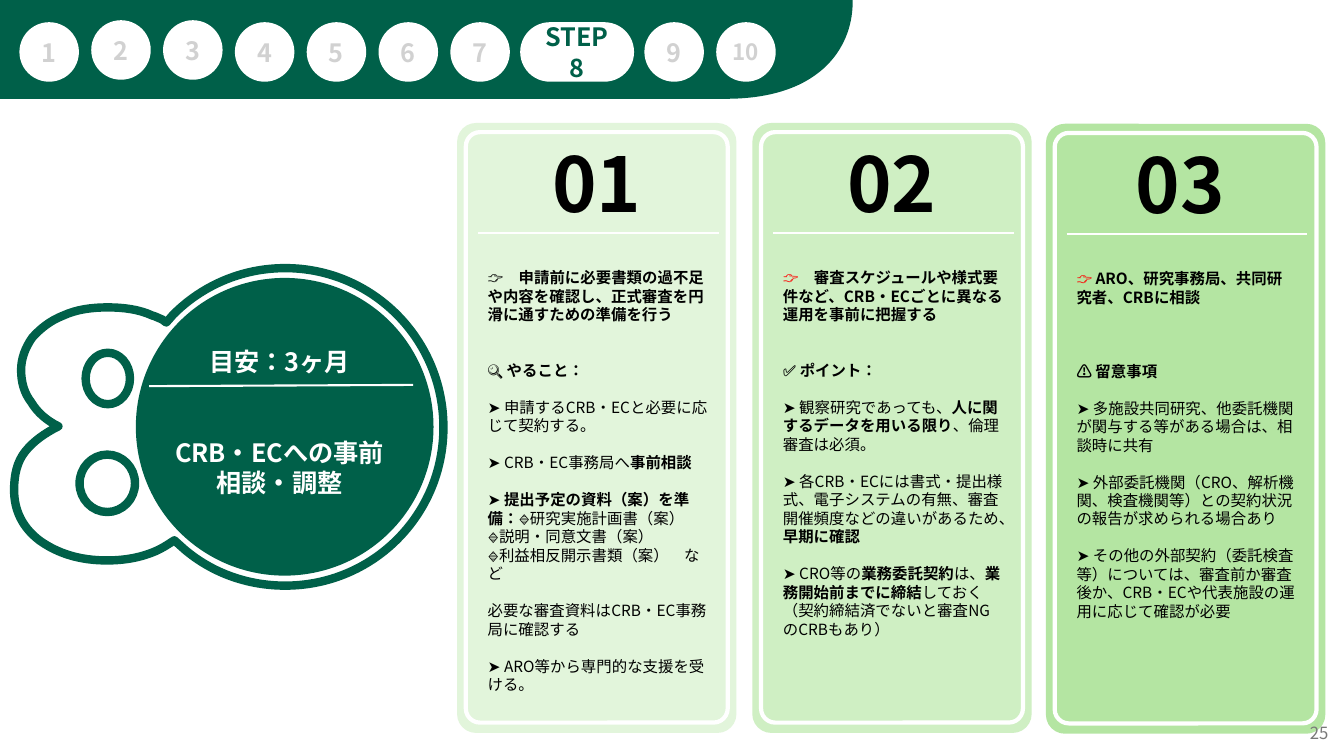
from lxml.etree import SubElement
from pptx import Presentation
from pptx.dml.color import RGBColor as RGB
from pptx.enum.lang import MSO_LANGUAGE_ID as Lang
from pptx.enum.shapes import MSO_CONNECTOR as Link, MSO_SHAPE as Kind
from pptx.enum.text import MSO_ANCHOR as Anchor, PP_ALIGN as Align
from pptx.oxml.ns import qn
from pptx.util import Cm, Pt

FONT = "Noto Sans CJK JP"
GREEN = RGB(0x00, 0x60, 0x49)
WHITE = RGB(0xFF, 0xFF, 0xFF)
BLACK = RGB(0x00, 0x00, 0x00)
RED = RGB(0xFF, 0x00, 0x00)
PALE = RGB(0xD1, 0xD1, 0xD1)
GREY = RGB(0x79, 0x79, 0x79)
MINT = RGB(0xE2, 0xF5, 0xDB)
LIME = RGB(0xCF, 0xEF, 0xC3)
LEAF = RGB(0xB4, 0xE5, 0xA2)

UNIT = Cm(0.0254)  # outlines are drawn on a grid of 1/100 inch
# Two numbers are a corner, six are a curve.
BAND = [(0, 0), (723, 0), (846, 0), (847, 43, 818, 97, 723, 98), (0, 98), (0, 0)]
EIGHT = [
    (283, 266), (370, 266, 440, 337, 440, 424), (440, 511, 370, 581, 283, 581),
    (245, 581, 210, 568, 183, 545), (173, 536), (167, 540, 161, 544, 154, 547),
    (140, 553, 124, 556, 106, 556), (79, 556, 57, 549, 39, 536),
    (22, 523, 14, 506, 14, 486), (14, 471, 17, 458, 25, 448),
    (33, 438, 44, 430, 58, 423), (46, 417, 37, 409, 31, 399),
    (24, 390, 21, 379, 21, 367), (21, 356, 25, 345, 32, 335),
    (40, 326, 50, 318, 63, 313), (76, 307, 91, 305, 107, 305),
    (123, 305, 138, 307, 151, 313), (155, 314, 158, 316, 161, 317),
    (165, 320), (172, 312), (200, 284, 239, 266, 283, 266),
]

# Each line is (blank lines before, text); ** switches bold on and off.
CARDS = [
    (11.52, 3.1, "01", MINT, 0, BLACK, "👉　",
     "申請前に必要書類の過不足や内容を確認し、正式審査を円滑に通すための準備を行う", [
         (2, "**🔍 やること："),
         (1, "➤ 申請するCRB・ECと必要に応じて契約する。"),
         (1, "➤ CRB・EC事務局へ**事前相談"),
         (1, "➤ **提出予定の資料（案）を準備：🔹**研究実施計画書（案）"),
         (0, "🔹説明・同意文書（案）"),
         (0, "🔹利益相反開示書類（案）　など"),
         (1, "必要な審査資料はCRB・EC事務局に確認する"),
         (1, "➤ ARO等から専門的な支援を受ける。")]),
    (18.96, 3.1, "02", LIME, 0, RED, "👉　",
     "審査スケジュールや様式要件など、CRB・ECごとに異なる運用を事前に把握する", [
         (2, "**✅ ポイント："),
         (1, "➤ 観察研究であっても、**人に関するデータを用いる限り**、倫理審査は必須。"),
         (1, "➤ 各CRB・ECには書式・提出様式、電子システムの有無、"
             "審査開催頻度などの違いがあるため、**早期に確認"),
         (1, "➤ CRO等の**業務委託契約**は、**業務開始前までに締結**しておく"
             "（契約締結済でないと審査NGのCRBもあり）")]),
    (26.36, 3.12, "03", LEAF, -0.13, RED, "👉 ",
     "ARO、研究事務局、共同研究者、CRBに相談", [
         (3, "**⚠️ 留意事項"),
         (1, "➤ 多施設共同研究、他委託機関が関与する等がある場合は、相談時に共有"),
         (1, "➤ 外部委託機関（CRO、解析機関、検査機関等）との契約状況の報告が"
             "求められる場合あり"),
         (1, "➤ その他の外部契約（委託検査等）については、審査前か審査後か、"
             "CRB・ECや代表施設の運用に応じて確認が必要")]),
]


def add_run(para, text, size, color, bold=True):
    run = para.add_run()
    run.text = text
    font = run.font
    font.name, font.size, font.bold = FONT, Pt(size), bold
    font.color.rgb = color
    font.language_id = Lang.JAPANESE
    SubElement(font._element, qn("a:ea"), typeface=FONT)


def set_para(para, size, align=Align.LEFT, gap=0):
    """Fix the line pitch and leave a gap of whole lines above."""
    pitch = size * 1.2
    para.line_spacing = Pt(pitch)
    para.space_before = Pt(gap * pitch)
    para.alignment = align


def put_line(frame, text, size, color, align=Align.CENTER, bold=True):
    para = frame.paragraphs[0]
    set_para(para, size, align)
    add_run(para, text, size, color, bold)


def paint(shape, fill, line=None, width=0):
    shape.shadow.inherit = False
    shape.fill.solid()
    shape.fill.fore_color.rgb = fill
    if line is None:
        shape.line.fill.background()
    else:
        shape.line.color.rgb = line
        shape.line.width = Pt(width)


def add_box(slide, x, y, w, h):
    frame = slide.shapes.add_textbox(Cm(x), Cm(y), Cm(w), Cm(h)).text_frame
    frame.word_wrap = True
    return frame


def add_form(slide, kind, x, y, w, h, fill, line=None, width=0, round_by=None):
    shape = slide.shapes.add_shape(kind, Cm(x), Cm(y), Cm(w), Cm(h))
    if round_by is not None:
        shape.adjustments[0] = round_by
    paint(shape, fill, line, width)
    shape.text_frame.vertical_anchor = Anchor.MIDDLE
    return shape.text_frame


def add_rule(slide, x1, y1, x2, y2):
    rule = slide.shapes.add_connector(Link.STRAIGHT, Cm(x1), Cm(y1), Cm(x2), Cm(y2))
    rule.line.color.rgb = WHITE
    rule.line.width = Pt(1.5)
    SubElement(rule.element.spPr, qn("a:effectLst"))


def ring(x, y, rx, ry):
    """Four curves that make an ellipse."""
    kx, ky = 0.55 * rx, 0.55 * ry
    l, r, t, b = x - rx, x + rx, y - ry, y + ry
    return [(x, t), (x - kx, t, l, y - ky, l, y), (l, y + ky, x - kx, b, x, b),
            (x + kx, b, r, y + ky, r, y), (r, y - ky, x + kx, t, x, t)]


def add_outline(slide, loops, fill, line=None, width=0):
    """Draw every node as straight lines, then merge threes into curves."""
    pen = None
    for loop in loops:
        x, y = (v * UNIT for v in loop[0])
        if pen is None:
            pen = slide.shapes.build_freeform(x, y)
        else:
            pen.move_to(x, y)
        dots = [(n[i] * UNIT, n[i + 1] * UNIT)
                for n in loop[1:] for i in range(0, len(n), 2)]
        pen.add_line_segments(dots, close=True)
    shape = pen.convert_to_shape()
    legs = iter(list(shape.element.iter(qn("a:lnTo"))))
    for node in (n for loop in loops for n in loop[1:]):
        leg = next(legs)
        if len(node) == 6:
            leg.tag = qn("a:cubicBezTo")
            for more in (next(legs), next(legs)):
                leg.append(more[0])
                more.getparent().remove(more)
    paint(shape, fill, line, width)


def add_badge(slide, title):
    holes = [ring(106.5, 479.5, 27.5, 28.5), ring(107, 375.5, 22, 25.5)]
    add_outline(slide, holes + [EIGHT], WHITE, GREEN, 6)
    add_form(slide, Kind.FLOWCHART_CONNECTOR, 3.53, 7.11, 7.29, 7.29, GREEN, GREEN, 6)
    put_line(add_box(slide, 4.11, 8.61, 5.87, 1.1), "目安：3ヶ月", 18, WHITE)
    add_rule(slide, 3.76, 9.73, 10.41, 9.7)
    title.left, title.top, title.width, title.height = Cm(4.11), Cm(10.88), Cm(5.87), Cm(1.9)
    frame = title.text_frame
    frame.word_wrap = True
    frame.vertical_anchor = Anchor.TOP
    put_line(frame, "CRB・ECへの事前相談・調整", 18, WHITE)
    title.element.getparent().append(title.element)  # in front of the circle


def add_card(slide, x, y, label, fill, nudge, tint, icon, lead, notes):
    add_form(slide, Kind.ROUNDED_RECTANGLE, x, y, 7.04, 15.37, fill, round_by=0.068)
    add_form(slide, Kind.ROUNDED_RECTANGLE, x + 0.22, y + 0.23, 6.6, 14.88,
             fill, WHITE, 3, round_by=0.054)
    put_line(add_box(slide, x + 1.72 + nudge, y + 0.23, 3.6, 2.57), label, 54, BLACK)
    add_rule(slide, x + 0.52, y + 2.78, x + 6.59, y + 2.78)

    frame = add_box(slide, x + 0.52, y + 3.54, 6.05, 11)
    para = frame.paragraphs[0]
    set_para(para, 11)
    add_run(para, icon, 11, tint, False)
    add_run(para, lead, 11, BLACK)
    for gap, text in notes:
        para = frame.add_paragraph()
        set_para(para, 11, gap=gap)
        for i, part in enumerate(text.split("**")):
            if part:
                add_run(para, part, 11, BLACK, i % 2 == 1)


def add_steps(slide):
    add_outline(slide, [BAND], GREEN)
    for num in range(1, 11):
        x = 0.49 + 1.81 * (num - 1)
        if num == 8:
            pill = add_form(slide, Kind.ROUNDED_RECTANGLE, 13.11, 0.56, 2.87, 1.5,
                            WHITE, round_by=0.5)
            put_line(pill, "STEP 8", 18, GREEN)
            continue
        if num > 8:
            x += 1.27  # room for the wide pill
        y = 0.51 if num in (2, 3) else 0.56
        frame = add_form(slide, Kind.FLOWCHART_CONNECTOR, x, y, 1.5, 1.5, WHITE)
        frame.margin_left = frame.margin_right = Cm(0.1)
        put_line(frame, str(num), 16 if num == 10 else 18, PALE)


def main():
    deck = Presentation()
    deck.slide_width, deck.slide_height = Cm(33.87), Cm(19.05)
    slide = deck.slides.add_slide(deck.slide_layouts[5])
    for card in CARDS:
        add_card(slide, *card)
    add_badge(slide, slide.shapes.title)
    add_steps(slide)
    page = add_box(slide, 26.11, 17.96, 7.62, 1.01)
    page.vertical_anchor = Anchor.MIDDLE
    put_line(page, "25", 12, GREY, Align.RIGHT, False)
    deck.save("out.pptx")


if __name__ == "__main__":
    main()
